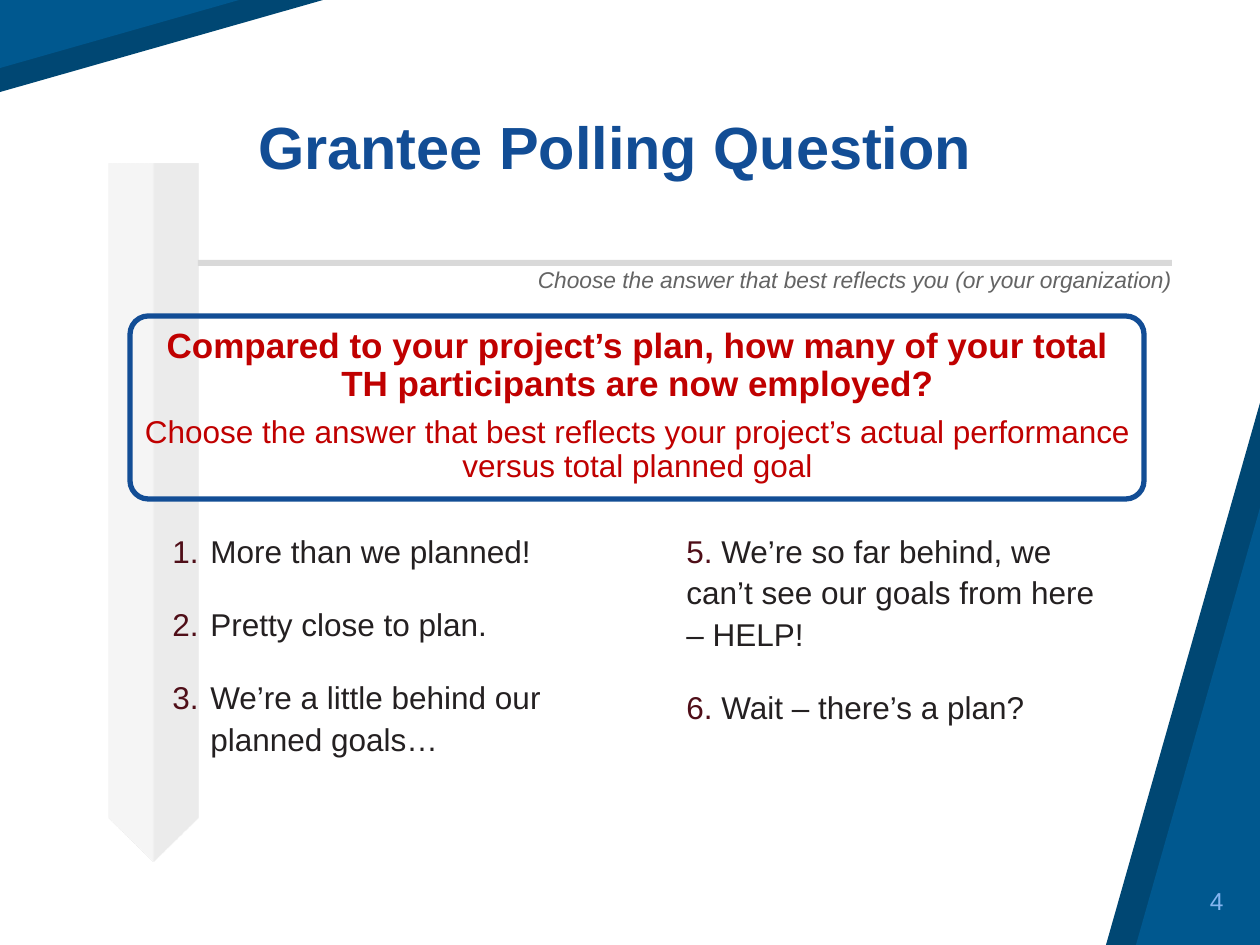
from lxml.etree import SubElement
from pptx import Presentation
from pptx.dml.color import RGBColor
from pptx.enum.shapes import MSO_SHAPE as Preset
from pptx.enum.text import MSO_ANCHOR as Anchor, PP_ALIGN as Align
from pptx.oxml.ns import qn
from pptx.util import Pt

PX = 914400 / 126
NAVY, BLUE, ROYAL = "004773", "00588F", "124D95"
RED, MAROON, INK = "C00000", "4F0E18", "242021"

prs = Presentation()
prs.slide_width, prs.slide_height = round(1260 * PX), round(945 * PX)
slide = prs.slides.add_slide(prs.slide_layouts[6])


def add_preset(preset, box, fill=None, adjust=()):
    shape = slide.shapes.add_shape(preset, *(round(v * PX) for v in box))
    shape.shadow.inherit = False
    shape.line.fill.background()
    if fill:
        shape.fill.solid()
        shape.fill.fore_color.rgb = RGBColor.from_string(fill)
    else:
        shape.fill.background()
    for i, value in enumerate(adjust):
        shape.adjustments[i] = value
    return shape


def add_text(box, paragraphs, size, align=Align.LEFT, anchor=Anchor.TOP,
             spacing=1.0, before=0, numbered=False):
    """Each paragraph is a list of (text, colour) runs."""
    frame = slide.shapes.add_textbox(*(round(v * PX) for v in box)).text_frame
    frame.word_wrap = True
    frame.vertical_anchor = anchor
    for i, runs in enumerate(paragraphs):
        paragraph = frame.paragraphs[0] if i == 0 else frame.add_paragraph()
        paragraph.alignment = align
        paragraph.line_spacing = spacing
        if i and before:
            paragraph.space_before = Pt(before)
        if numbered:
            props = paragraph._p.get_or_add_pPr()
            indent = round(38 * PX)
            props.set("marL", str(indent))
            props.set("indent", str(-indent))
            SubElement(SubElement(props, qn("a:buClr")), qn("a:srgbClr"), val=MAROON)
            SubElement(props, qn("a:buFont"), typeface="Arial")
            SubElement(props, qn("a:buAutoNum"), type="arabicPeriod")
        paragraph.font.name = "Arial"
        paragraph.font.size = Pt(size)
        for text, colour in runs:
            run = paragraph.add_run()
            run.text = text
            run.font.color.rgb = RGBColor.from_string(colour)
    return frame


# Corner wedges: right angle at bottom right, turned round for the top left
for box, colour, turn in [
    ((1106, 403, 154, 542), NAVY, 0),
    ((1136, 508, 124, 437), BLUE, 0),
    ((0, 0, 323, 92), NAVY, 180),
    ((0, 0, 239, 68), BLUE, 180),
]:
    wedge = add_preset(Preset.ISOSCELES_TRIANGLE, box, colour, [1])
    wedge.rotation = turn

# Two-tone arrow
arrow = add_preset(Preset.DOWN_ARROW, (109, 164, 89, 697), adjust=[1, 0.5])
arrow.fill.gradient()
arrow.fill.gradient_angle = 0
for stop, (position, colour) in zip(arrow.fill.gradient_stops,
                                    [(0.49, "F2F2F2"), (0.51, "D9D9D9")]):
    stop.position = position
    stop.color.rgb = RGBColor.from_string(colour)
for tone, alpha in zip(arrow._element.iter(qn("a:srgbClr")), (65000, 50000)):
    SubElement(tone, qn("a:alpha"), val=str(alpha))

# Heading
add_preset(Preset.RECTANGLE, (198, 260, 974, 6), "D9D9D9")
hint = add_text((363, 260, 820, 40),
                [[("Choose the answer that best reflects you (or your organization)", "646464")]],
                13, Align.RIGHT)
hint.paragraphs[0].font.italic = True
title = add_text((246, 78, 936, 145), [[("Grantee Polling Question", ROYAL)]],
                 34, anchor=Anchor.MIDDLE, spacing=0.9)
title.paragraphs[0].font.bold = True
add_text((1060, 876, 176, 50), [[("4", "85B5F0")]], 14, Align.RIGHT, Anchor.MIDDLE)

# Question
frame_box = add_preset(Preset.ROUNDED_RECTANGLE, (130, 316, 1014, 183), adjust=[0.1])
frame_box.line.color.rgb = RGBColor.from_string(ROYAL)
frame_box.line.width = Pt(3)
question = add_text((136, 321, 1003, 171), [
    [("Compared to your project’s plan, how many of your total "
      "TH participants are now employed?", RED)],
    [("Choose the answer that best reflects your project’s actual performance "
      "versus total planned goal", RED)],
], 18, Align.CENTER, Anchor.MIDDLE, spacing=0.9)
question.margin_left = question.margin_right = round(5 * PX)
question.margin_top = question.margin_bottom = round(4 * PX)
question.paragraphs[0].font.size = Pt(20)
question.paragraphs[0].font.bold = True
question.paragraphs[0].space_after = Pt(7)

# Answers
add_text((160, 522, 509, 446), [
    [("More than we planned!", INK)],
    [("Pretty close to plan.", INK)],
    [("We’re a little behind our planned goals…", INK)],
], 18, spacing=1.1, before=18, numbered=True)
add_text((674, 522, 438, 237), [
    [("5. ", MAROON), ("We’re so far behind, we can’t see our goals from here – HELP!", INK)],
    [("6. ", MAROON), ("Wait – there’s a plan?", INK)],
], 18, spacing=1.1, before=18)

prs.save("out.pptx")
